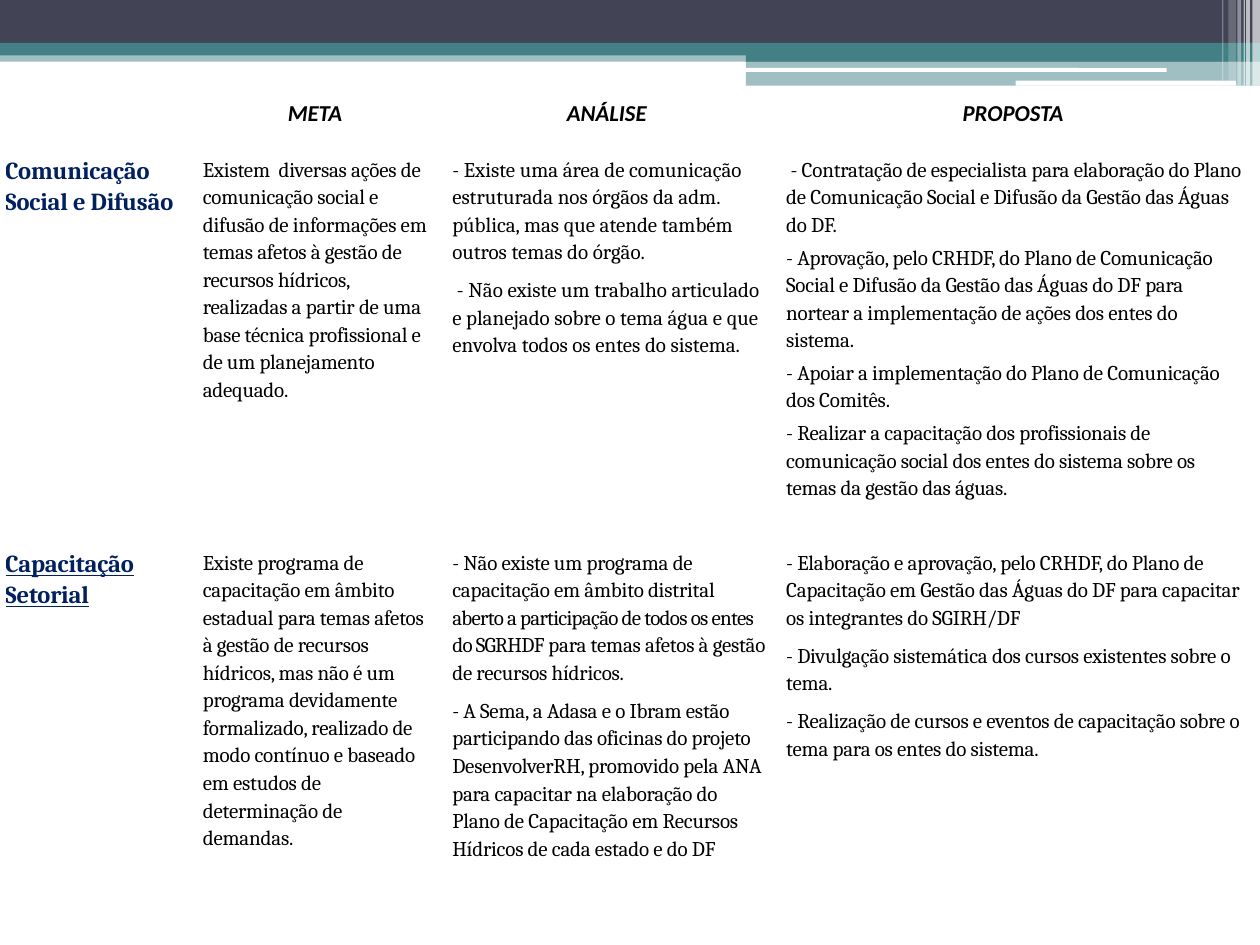
from dataclasses import dataclass

from pptx import Presentation
from pptx import util as u
from pptx.dml.color import RGBColor
from pptx.enum import shapes, text
from pptx.oxml.ns import qn
from lxml import etree


@dataclass(frozen=True)
class Theme:
    """Colours, fonts and type sizes of the slide."""
    navy: str = "424456"
    teal: str = "438086"
    white: str = "FFFFFF"
    black: str = "000000"
    label: str = "002060"
    head_font: str = "Calibri"
    body_font: str = "Cambria"
    head_size: int = 13
    label_size: int = 14
    body_size: int = 12
    tight: int = -10
    tighter: int = -40


T = Theme()
GRID_COLS, GRID_ROWS = 1000, 750
BAND_BOX = (0, 0, 1000, 68)
TABLE_BOX = (4, 76, 984, 653)
COLS = (141, 198, 265, 380)
ROWS = (47, 312, 294)

HEADS = ("META", "ANÁLISE", "PROPOSTA")
TOPICS = (
    dict(label="Comunicação Social e Difusão", underline=False, cells=(
        (0, T.tight, [
            "Existem  diversas ações de comunicação social e difusão de informações em temas afetos à gestão de recursos hídricos, realizadas a partir de uma base técnica profissional e de um planejamento adequado."]),
        (6, 0, [
            "- Existe uma área de comunicação estruturada nos órgãos da adm. pública, mas que atende também outros temas do órgão.",
            " - Não existe um trabalho articulado e planejado sobre o tema água e que envolva todos os entes do sistema."]),
        (3, T.tight, [
            " - Contratação de especialista para elaboração do Plano de Comunicação Social e Difusão da Gestão das Águas do DF.",
            "- Aprovação, pelo CRHDF, do Plano de Comunicação Social e Difusão da Gestão das Águas do DF para nortear a implementação de ações dos entes do sistema.",
            "- Apoiar a implementação do Plano de Comunicação dos Comitês.",
            "- Realizar a capacitação dos profissionais de comunicação social dos entes do sistema sobre os temas da gestão das águas."]))),
    dict(label="Capacitação Setorial", underline=True, cells=(
        (0, T.tight, [
            "Existe programa de capacitação em âmbito estadual para temas afetos à gestão de recursos hídricos, mas não é um programa devidamente formalizado, realizado de modo contínuo e baseado em estudos de determinação de demandas."]),
        (6, T.tight, [
            ("- Não existe um programa de capacitação em âmbito distrital",
             (" aberto a participação de todos os entes do SGRHDF ", T.tighter),
             "para temas afetos à gestão de recursos hídricos."),
            "- A Sema, a Adasa e o Ibram estão participando das oficinas do projeto DesenvolverRH, promovido pela ANA para capacitar na elaboração do Plano de Capacitação em Recursos Hídricos de cada estado e do DF"]),
        (6, T.tight, [
            "- Elaboração e aprovação, pelo CRHDF, do Plano de Capacitação em Gestão das Águas do DF para capacitar os integrantes do SGIRH/DF",
            "- Divulgação sistemática dos cursos existentes sobre o tema.",
            "- Realização de cursos e eventos de capacitação sobre o tema para os entes do sistema."]))),
)


def place(prs, box, part):
    """Turn a part's grid cells within a box into slide lengths."""
    cw, rh = prs.slide_width / GRID_COLS, prs.slide_height / GRID_ROWS
    x, y, w, h = part
    return [u.Emu(round(v)) for v in
            ((box[0] + x) * cw, (box[1] + y) * rh, w * cw, h * rh)]


def add_bar(prs, s, box, part, color, alpha=100, rounded=False):
    """Draw one plain bar of the header band."""
    kind = shapes.MSO_SHAPE.ROUNDED_RECTANGLE if rounded else shapes.MSO_SHAPE.RECTANGLE
    sp = s.shapes.add_shape(kind, *place(prs, box, part))
    sp.shadow.inherit = False
    sp.line.fill.background()
    sp.fill.solid()
    sp.fill.fore_color.rgb = RGBColor.from_string(color)
    if alpha < 100:
        clr = sp.fill._xPr.find(qn("a:solidFill"))[0]
        etree.SubElement(clr, qn("a:alpha")).set("val", str(alpha * 1000))


def add_band(prs, s, box):
    """Draw the header band: bars, white rules and vertical stripes."""
    full, right = box[2], 592
    for part, color, alpha in (
            ((0, 40, full, 9), T.teal, 50),
            ((0, 0, full, 34), T.navy, 100),
            ((0, 34, full, 10), T.teal, 100),
            ((right, 39, full - right, 10), T.teal, 100),
            ((right, 48, full - right, 20), T.teal, 50)):
        add_bar(prs, s, box, part, color, alpha)
    for part in ((591, 54, 335, 3), (806, 64, 175, 4)):
        add_bar(prs, s, box, part, T.white, rounded=True)
    for x, w, h, alpha in ((994, 6, 68, 65), (989, 3, 68, 65), (987, 1, 68, 60),
                           (982, 3, 68, 40), (975, 6, 64, 20), (970, 1, 64, 30)):
        add_bar(prs, s, box, (x, 0, w, h), T.white, alpha)


def format_cell(cell, top, bottom):
    """Clear a cell's fill and insets and give it white borders."""
    cell.margin_left = cell.margin_right = cell.margin_top = cell.margin_bottom = 0
    cell.fill.background()
    tcPr = cell._tc.get_or_add_tcPr()
    for i, (side, width) in enumerate((("L", 1), ("R", 1), ("T", top), ("B", bottom))):
        ln = etree.Element(qn(f"a:ln{side}"), w=str(u.Pt(width)))
        fill = etree.SubElement(ln, qn("a:solidFill"))
        etree.SubElement(fill, qn("a:srgbClr")).set("val", T.white)
        tcPr.insert(i, ln)


def write(cell, paras, font, size, color, spacing=0, bold=False, italic=False,
          underline=False, indent=0.0, line=1.14, after=0, align=None):
    """Write paragraphs of plain or specially spaced runs into a cell."""
    tf = cell.text_frame
    for i, para in enumerate(paras):
        p = tf.add_paragraph() if i else tf.paragraphs[0]
        p.alignment, p.line_spacing, p.space_after = align, line, u.Pt(after)
        p._p.get_or_add_pPr().set("marL", str(u.Inches(indent)))
        f = p.font
        f.name, f.size, f.bold, f.italic, f.underline = font, u.Pt(size), bold, italic, underline
        f.color.rgb = RGBColor.from_string(color)
        for run in (para,) if isinstance(para, str) else para:
            words, spc = (run, spacing) if isinstance(run, str) else run
            r = p.add_run()
            r.text = words
            r._r.get_or_add_rPr().set("spc", str(spc))


def add_topics(prs, s, box):
    """Build the table of topics by goal, analysis and proposal."""
    tb = s.shapes.add_table(len(ROWS), len(COLS), *place(prs, box, (0, 0, *box[2:]))).table
    for col, n in zip(tb.columns, COLS):
        col.width = round(prs.slide_width * n / GRID_COLS)
    for i, (row, n) in enumerate(zip(tb.rows, ROWS)):
        row.height = round(prs.slide_height * n / GRID_ROWS)
        for cell in row.cells:
            format_cell(cell, 3 if i == 2 else 1, 3 if i == 0 else 1)
    for j, head in enumerate(HEADS, 1):
        write(tb.cell(0, j), [head], T.head_font, T.head_size, T.black, bold=True,
              italic=True, indent=0.12, align=text.PP_ALIGN.CENTER)
    for i, topic in enumerate(TOPICS, 1):
        write(tb.cell(i, 0), [topic["label"]], T.body_font, T.label_size, T.label,
              T.tight, bold=True, underline=topic["underline"], line=1.1)
        for j, (after, spacing, paras) in enumerate(topic["cells"], 1):
            write(tb.cell(i, j), paras, T.body_font, T.body_size, T.black, spacing,
                  indent=0.16, after=after)


def main():
    """Build and save the slide."""
    prs = Presentation()
    prs.slide_width, prs.slide_height = u.Inches(10), u.Inches(7.5)
    s = prs.slides.add_slide(prs.slide_layouts[6])
    add_band(prs, s, BAND_BOX)
    add_topics(prs, s, TABLE_BOX)
    prs.save("out.pptx")


if __name__ == "__main__":
    main()
